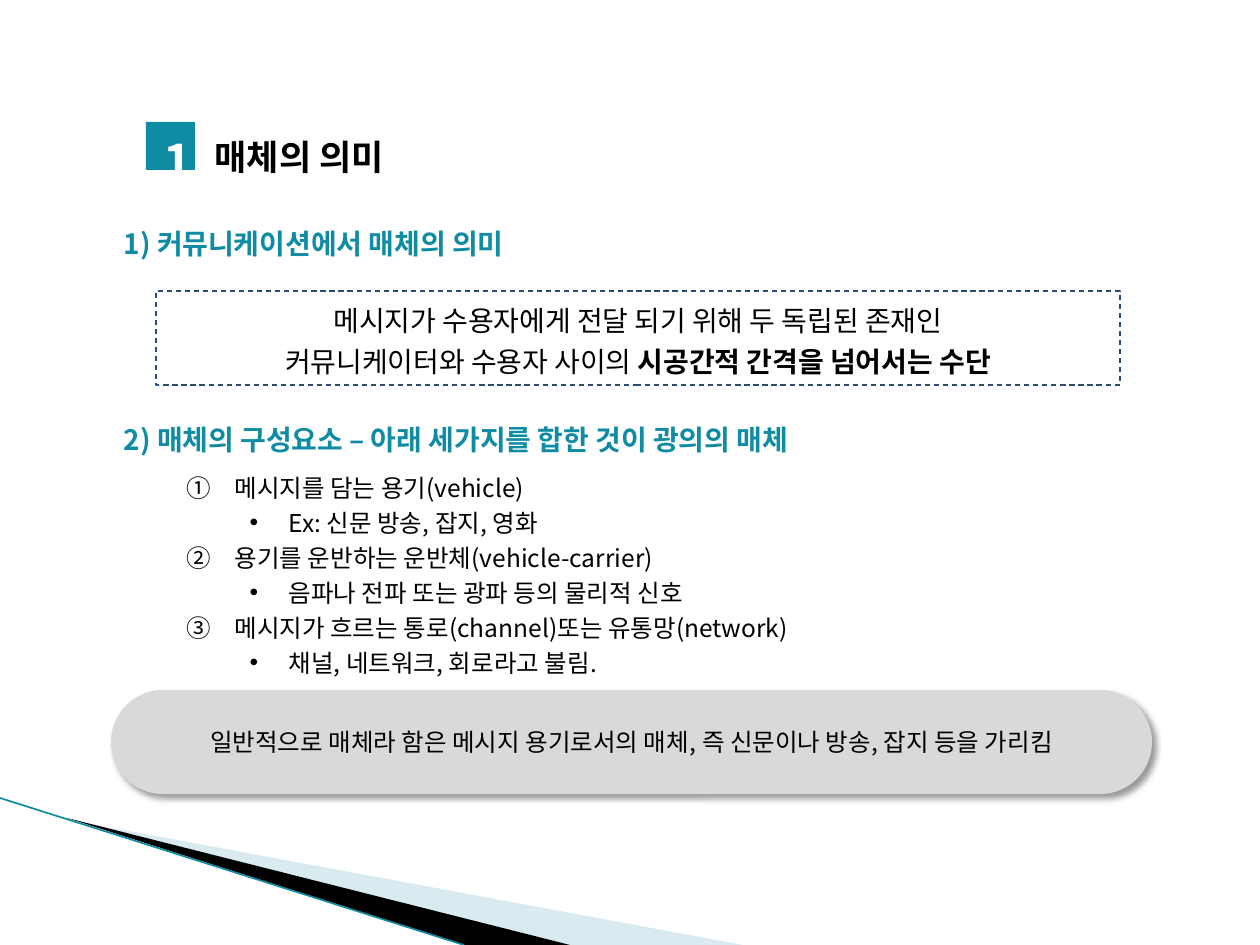
from lxml import etree
from pptx import Presentation
from pptx import util as u
from pptx.dml.color import RGBColor
from pptx.enum import dml, shapes, text
from pptx.oxml.ns import qn

PX = 914400 / 126
FONT = "Noto Sans CJK KR"
TEAL = RGBColor(0x10, 0x8B, 0xA4)
PALE = RGBColor(0xA0, 0xCB, 0xDC)
GRAY = RGBColor(0xD9, 0xD9, 0xD9)
NAVY = RGBColor(0x2B, 0x4A, 0x76)
BLACK = RGBColor(0, 0, 0)
WHITE = RGBColor(255, 255, 255)
LEAD = 1.44  # line height per point of text size

TITLE = "매체의 의미"
# level, space before, text
BODY = [
    (0, 0, "1) 커뮤니케이션에서 매체의 의미"),
    (0, 89, "2) 매체의 구성요소 – 아래 세가지를 합한 것이 광의의 매체"),
    (1, 6, "메시지를 담는 용기(vehicle)"),
    (2, 0, "Ex: 신문 방송, 잡지, 영화"),
    (1, 0, "용기를 운반하는 운반체(vehicle-carrier)"),
    (2, 0, "음파나 전파 또는 광파 등의 물리적 신호"),
    (1, 0, "메시지가 흐르는 통로(channel)또는 유통망(network)"),
    (2, 0, "채널, 네트워크, 회로라고 불림."),
]
# size, colour, bold, left margin, hanging indent, bullet tag and attributes
LEVELS = [
    (16, TEAL, True, 0, 0, "a:buNone", {}),
    (14, BLACK, False, 111, 48, "a:buAutoNum", {"type": "circleNumDbPlain"}),
    (14, BLACK, False, 165, 39, "a:buChar", {"char": "•"}),
]
# each line as (text, bold) runs
QUOTE = [
    [("메시지가 수용자에게 전달 되기 위해 두 독립된 존재인", False)],
    [("커뮤니케이터와 수용자 사이의 ", False), ("시공간적 간격을 넘어서는 수단", True)],
]
NOTE = "일반적으로 매체라 함은 메시지 용기로서의 매체, 즉 신문이나 방송, 잡지 등을 가리킴"
WEDGES = [
    (PALE, 40, [(69, 820), (743, 945), (570, 945)]),
    (BLACK, 100, [(67, 818), (570, 945), (464, 945)]),
]


def emu(*px):
    return [round(n * PX) for n in px]


def sub(node, tag, **attrs):
    return etree.SubElement(node, qn(tag), attrs)


def place(shape, *box):
    shape.left, shape.top, shape.width, shape.height = emu(*box)


def style(para, size, color, bold=False, lead=True):
    para.space_before = para.space_after = u.Pt(0)
    if lead:
        para.line_spacing = u.Pt(round(size * LEAD))
    for run in para.runs:
        font = run.font
        font.size, font.bold, font.name = u.Pt(size), bold, FONT
        font.color.rgb = color
        sub(run._r.get_or_add_rPr(), "a:ea", typeface=FONT)


def plain(shape, fill=None):
    shape.shadow.inherit = False
    shape.line.fill.background()
    if fill is None:
        shape.fill.background()
    else:
        shape.fill.solid()
        shape.fill.fore_color.rgb = fill


def wedge(slide, color, alpha, points):
    pen = slide.shapes.build_freeform(*points[0], scale=PX)
    pen.add_line_segments(points[1:])
    shape = pen.convert_to_shape()
    plain(shape, color)
    if alpha < 100:
        tint = shape._element.spPr.find(".//" + qn("a:srgbClr"))
        sub(tint, "a:alpha", val=str(alpha * 1000))


def edge(slide):
    line = slide.shapes.add_connector(
        shapes.MSO_CONNECTOR.STRAIGHT, *emu(0, 798, 464, 945))
    line.line.color.rgb, line.line.width = TEAL, u.Pt(0.95)
    sub(line._element.spPr, "a:effectLst")


def outline(body):
    place(body, 111, 214, 971, 476)
    frame = body.text_frame
    frame.auto_size = text.MSO_AUTO_SIZE.NONE
    frame.vertical_anchor = text.MSO_ANCHOR.TOP
    frame.text = "\n".join(words for _, _, words in BODY)
    for para, (level, gap, _) in zip(frame.paragraphs, BODY):
        size, color, bold, left, hang, tag, attrs = LEVELS[level]
        para.level = level
        props = para._p.get_or_add_pPr()
        margin, indent = emu(left, -hang)
        props.set("marL", str(margin))
        props.set("indent", str(indent))
        sub(props, tag, **attrs)
        style(para, size, color, bold)
        para.space_before = u.Pt(gap)


def heading(slide):
    title = slide.shapes.title
    place(title, 202, 120, 230, 55)
    frame = title.text_frame
    frame.text = TITLE
    frame.auto_size = text.MSO_AUTO_SIZE.NONE
    frame.vertical_anchor = text.MSO_ANCHOR.TOP
    frame.paragraphs[0].alignment = text.PP_ALIGN.LEFT
    style(frame.paragraphs[0], 20, BLACK, True)

    tile = slide.shapes.add_shape(
        shapes.MSO_SHAPE.RECTANGLE, *emu(146, 122, 49, 48))
    plain(tile, TEAL)
    digit = slide.shapes.add_textbox(*emu(164, 120, 30, 59)).text_frame
    digit.margin_left = digit.margin_right = 0
    digit.margin_top = digit.margin_bottom = 0
    digit.word_wrap = False
    digit.text = "1"
    style(digit.paragraphs[0], 28, WHITE, True)


def quote(slide):
    box = slide.shapes.add_shape(
        shapes.MSO_SHAPE.RECTANGLE, *emu(156, 291, 964, 94))
    plain(box)
    box.line.color.rgb, box.line.width = NAVY, u.Pt(0.75)
    box.line.dash_style = dml.MSO_LINE.DASH
    frame = box.text_frame
    frame.vertical_anchor = text.MSO_ANCHOR.TOP
    for i, runs in enumerate(QUOTE):
        para = frame.add_paragraph() if i else frame.paragraphs[0]
        para.alignment = text.PP_ALIGN.CENTER
        for words, _ in runs:
            para.add_run().text = words
        style(para, 16, BLACK)
        for run, (_, bold) in zip(para.runs, runs):
            run.font.bold = bold


def note(slide):
    pill = slide.shapes.add_shape(
        shapes.MSO_SHAPE.ROUND_2_SAME_RECTANGLE, *emu(111, 690, 1041, 104))
    pill.adjustments[0] = pill.adjustments[1] = 0.5
    plain(pill, GRAY)
    glow = pill._element.spPr.find(qn("a:effectLst"))
    shade = sub(glow, "a:outerShdw", blurRad=str(u.Pt(4)), dist=str(u.Pt(3)),
                dir="2700000", algn="tl", rotWithShape="0")
    sub(sub(shade, "a:srgbClr", val="000000"), "a:alpha", val="40000")
    frame = pill.text_frame
    frame.vertical_anchor = text.MSO_ANCHOR.MIDDLE
    frame.text = NOTE
    frame.paragraphs[0].alignment = text.PP_ALIGN.CENTER
    style(frame.paragraphs[0], 14, BLACK, lead=False)


def main():
    deck = Presentation()
    deck.slide_width, deck.slide_height = emu(1260, 945)
    slide = deck.slides.add_slide(deck.slide_layouts[1])
    for item in WEDGES:
        wedge(slide, *item)
    edge(slide)
    outline(slide.placeholders[1])
    note(slide)
    quote(slide)
    heading(slide)
    deck.save("out.pptx")


if __name__ == "__main__":
    main()
